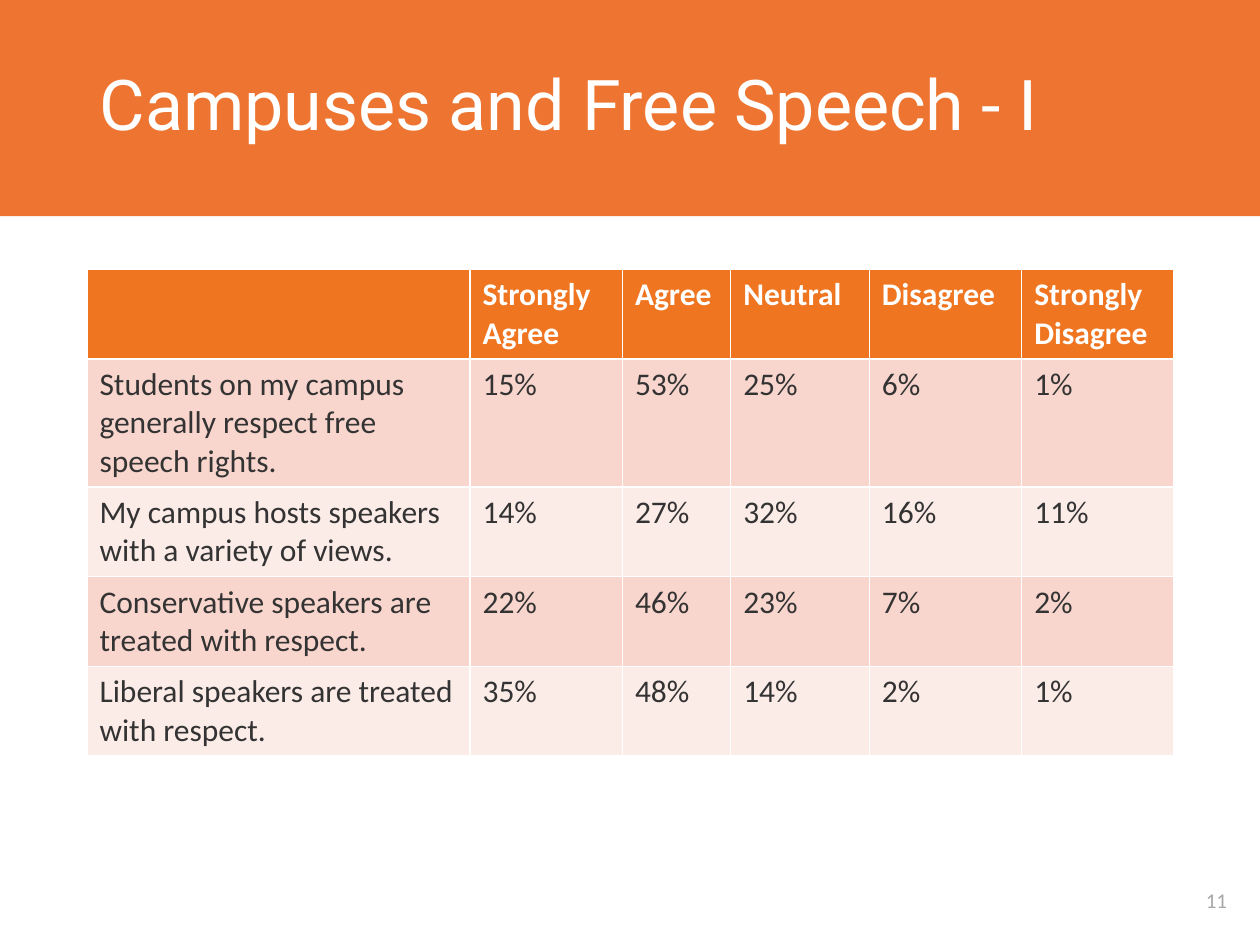
import pptx
import pptx.util
import pptx.dml.color
import pptx.enum.shapes
import pptx.enum.text
from pptx.util import Pt

COLORS = {
    "band": "EE7531",
    "header": "EF7521",
    "odd_row": "F9D6CD",
    "even_row": "FCECE8",
    "body": "333333",
    "number": "A6A6A6",
    "white": "FFFFFF",
}
COLUMN_WIDTHS = [218.9, 87.1, 61.9, 79.2, 87.1, 87.1]
ROW_HEIGHTS = [50.4, 72, 50.4, 50.4, 50.4]
ROWS = [
    ["", "Strongly\nAgree", "Agree", "Neutral", "Disagree", "Strongly Disagree"],
    ["Students on my campus generally respect free speech rights.",
     "15%", "53%", "25%", "6%", "1%"],
    ["My campus hosts speakers with a variety of views.",
     "14%", "27%", "32%", "16%", "11%"],
    ["Conservative speakers are treated with respect.",
     "22%", "46%", "23%", "7%", "2%"],
    ["Liberal speakers are treated with respect.",
     "35%", "48%", "14%", "2%", "1%"],
]


def rgb(name):
    return pptx.dml.color.RGBColor.from_string(COLORS[name])


def format_text(text_frame, font_name, size, color, bold=False):
    for paragraph in text_frame.paragraphs:
        paragraph.font.name = font_name
        paragraph.font.size = Pt(size)
        paragraph.font.bold = bold
        paragraph.font.color.rgb = rgb(color)


def add_title_band(slide, left, top, width, height):
    band = slide.shapes.add_shape(
        pptx.enum.shapes.MSO_SHAPE.RECTANGLE,
        Pt(left), Pt(top), Pt(width), Pt(height))
    band.shadow.inherit = False
    band.fill.solid()
    band.fill.fore_color.rgb = rgb("band")
    band.line.fill.background()

    # The title lies in front of the band, in line with the table
    title = slide.shapes.title
    title.element.addprevious(band.element)
    title.left, title.top = Pt(left + 50.4), Pt(top)
    title.width, title.height = Pt(width - 100.8), Pt(height)
    text_frame = title.text_frame
    text_frame.text = "Campuses and Free Speech - I"
    text_frame.vertical_anchor = pptx.enum.text.MSO_ANCHOR.MIDDLE
    paragraph = text_frame.paragraphs[0]
    paragraph.alignment = pptx.enum.text.PP_ALIGN.LEFT
    paragraph.line_spacing = 0.9
    format_text(text_frame, "Roboto", 40, "white")


def add_survey_table(slide, left, top, width, height):
    table = slide.shapes.add_table(
        len(ROWS), len(COLUMN_WIDTHS),
        Pt(left), Pt(top), Pt(width), Pt(height)).table
    for column, column_width in zip(table.columns, COLUMN_WIDTHS):
        column.width = Pt(column_width)
    for row_index, (row, texts) in enumerate(zip(table.rows, ROWS)):
        row.height = Pt(ROW_HEIGHTS[row_index])
        is_header = row_index == 0
        fill = "header" if is_header else "odd_row" if row_index % 2 else "even_row"
        for cell, text in zip(row.cells, texts):
            cell.fill.solid()
            cell.fill.fore_color.rgb = rgb(fill)
            cell.text = text
            format_text(cell.text_frame, "Calibri", 18,
                        "white" if is_header else "body", is_header)


def add_slide_number(slide, left, top, width, height):
    box = slide.shapes.add_textbox(Pt(left), Pt(top), Pt(width), Pt(height))
    text_frame = box.text_frame
    text_frame.word_wrap = True
    text_frame.text = "11"
    text_frame.vertical_anchor = pptx.enum.text.MSO_ANCHOR.MIDDLE
    text_frame.paragraphs[0].alignment = pptx.enum.text.PP_ALIGN.CENTER
    format_text(text_frame, "Calibri", 12, "number")


def main():
    presentation = pptx.Presentation()
    presentation.slide_width, presentation.slide_height = Pt(720), Pt(540)
    slide = presentation.slides.add_slide(presentation.slide_layouts[5])
    add_title_band(slide, -0.7, 0, 721.4, 123.6)
    add_survey_table(slide, 49.7, 154.1, sum(COLUMN_WIDTHS), sum(ROW_HEIGHTS))
    add_slide_number(slide, 670.3, 500.4, 49.7, 28.1)
    presentation.save("out.pptx")


if __name__ == "__main__":
    main()
